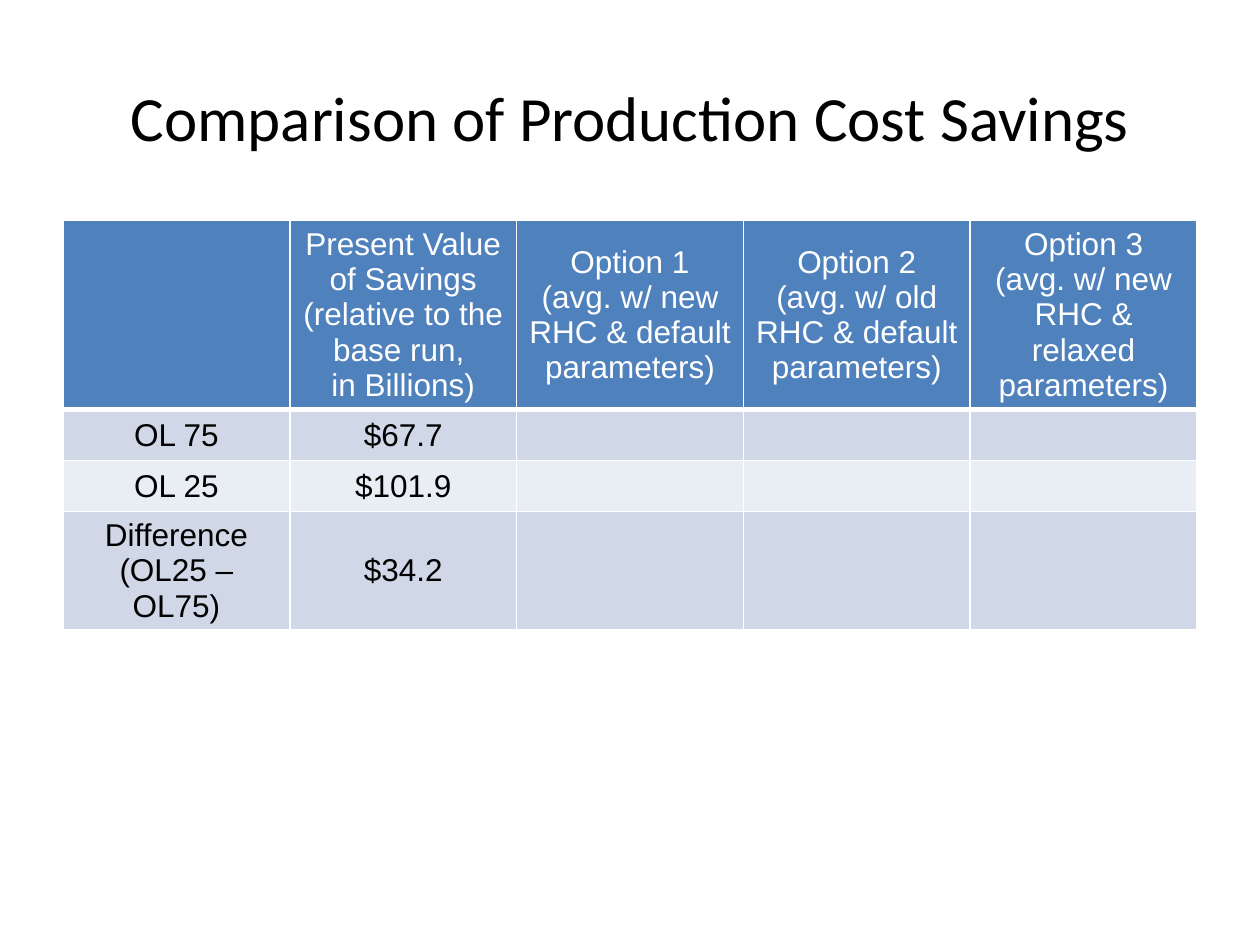
import pptx
import pptx.dml.color
import pptx.enum.text
import pptx.oxml
import pptx.oxml.ns
import pptx.util

Pt = pptx.util.Pt
WHITE = pptx.dml.color.RGBColor(0xFF, 0xFF, 0xFF)
BLACK = pptx.dml.color.RGBColor(0x00, 0x00, 0x00)
HEADER_BLUE = pptx.dml.color.RGBColor(0x4F, 0x81, 0xBD)
BAND_DARK = pptx.dml.color.RGBColor(0xD0, 0xD8, 0xE8)
BAND_LIGHT = pptx.dml.color.RGBColor(0xE9, 0xED, 0xF4)
CENTER = pptx.enum.text.PP_ALIGN.CENTER
MIDDLE = pptx.enum.text.MSO_ANCHOR.MIDDLE

ROWS = [
    ["", "Present Value of Savings\n(relative to the base run, \vin Billions)",
     "Option 1\v(avg. w/ new RHC & default parameters)",
     "Option 2\n(avg. w/ old RHC & default parameters)",
     "Option 3\n(avg. w/ new RHC & relaxed parameters)"],
    ["OL 75", "$67.7", "", "", ""],
    ["OL 25", "$101.9", "", "", ""],
    ["Difference\v(OL25 – OL75)", "$34.2", "", "", ""],
]
ROW_HEIGHTS = [107.5, 29.2, 29.2, 67]
ROW_FILLS = [HEADER_BLUE, BAND_DARK, BAND_LIGHT, BAND_DARK]


def format_text(frame, font_format):
    frame.vertical_anchor = MIDDLE
    for para in frame.paragraphs:
        para.alignment = CENTER
        for target in [para, *para.runs]:
            for name, value in font_format.items():
                setattr(target.font, name, value)


def add_border(cell, side, width):
    line = pptx.oxml.parse_xml(
        f'<a:ln{side} {pptx.oxml.ns.nsdecls("a")} w="{Pt(width)}">'
        f'<a:solidFill><a:srgbClr val="{WHITE}"/></a:solidFill></a:ln{side}>'
    )
    cell._tc.get_or_add_tcPr().append(line)


deck = pptx.Presentation()
deck.slide_width = Pt(720)
deck.slide_height = Pt(540)
page = deck.slides.add_slide(deck.slide_layouts[5])

title = page.shapes.title
title_place = {"left": Pt(36), "top": Pt(21.6), "width": Pt(648), "height": Pt(90)}
for name, value in title_place.items():
    setattr(title, name, value)
title.text_frame.text = "Comparison of Production Cost Savings"
format_text(title.text_frame, {"name": "Calibri", "size": Pt(36)})
title.text_frame.paragraphs[0].runs[0].font.color.rgb = BLACK

table = page.shapes.add_table(
    len(ROWS), len(ROWS[0]), Pt(36), Pt(126), Pt(648), Pt(sum(ROW_HEIGHTS))
).table
for row_index, texts in enumerate(ROWS):
    is_header = row_index == 0
    table.rows[row_index].height = Pt(ROW_HEIGHTS[row_index])
    for column_index, text in enumerate(texts):
        cell = table.cell(row_index, column_index)
        cell.text_frame.text = text
        format_text(cell.text_frame, {"name": "Arial", "size": Pt(18), "bold": False})
        cell.vertical_anchor = MIDDLE
        for para in cell.text_frame.paragraphs:
            for span in para.runs:
                span.font.color.rgb = WHITE if is_header else BLACK
        for side in "LRTB":
            add_border(cell, side, 3 if is_header and side == "B" else 1)
        cell.fill.solid()
        cell.fill.fore_color.rgb = ROW_FILLS[row_index]

deck.save("out.pptx")
